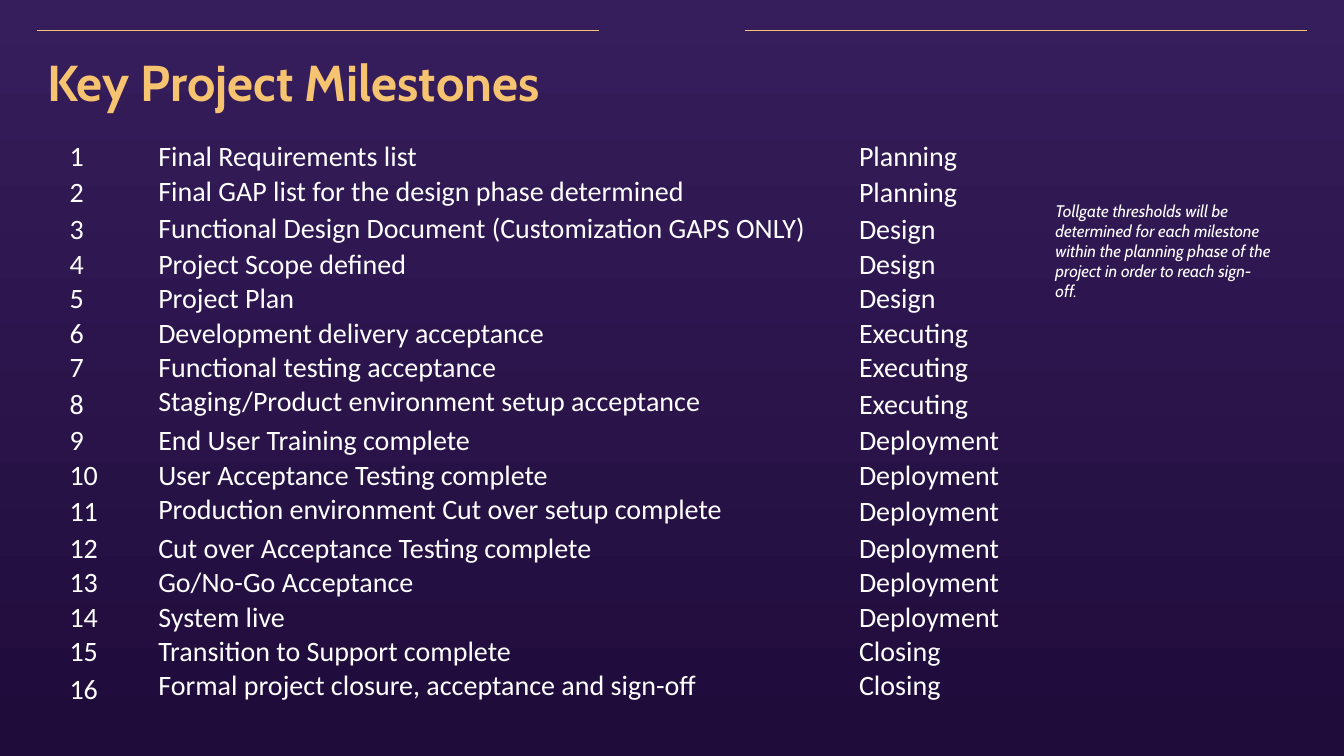
from pptx import Presentation
from pptx.dml.color import RGBColor
from pptx.enum.shapes import MSO_CONNECTOR
from pptx.enum.text import MSO_ANCHOR
from pptx.oxml.ns import qn
from pptx.util import Inches, Pt
from lxml.etree import SubElement

COLORS = {"gold": "F6C370", "text": "FFFFFF", "top": "361D5C", "bottom": "200C3B"}
NO_GRID_STYLE = "{2D5ABB26-0587-4C30-8999-92F81FD0307C}"

FORMATS = {
    "title": {"name": "Cabin", "size": Pt(36), "bold": True},
    "note": {"name": "Cabin", "size": Pt(12), "italic": True},
    "cell": {"name": "Calibri", "size": Pt(20)},
}
CELL_MARGINS = {
    "margin_left": Inches(0.01), "margin_right": Inches(0.01),
    "margin_top": 0, "margin_bottom": 0,
}

MILESTONES = [
    ("Final Requirements list", "Planning"),
    ("Final GAP list for the design phase determined", "Planning"),
    ("Functional Design Document (Customization GAPS ONLY)", "Design"),
    ("Project Scope defined", "Design"),
    ("Project Plan", "Design"),
    ("Development delivery acceptance", "Executing"),
    ("Functional testing acceptance", "Executing"),
    ("Staging/Product environment setup acceptance", "Executing"),
    ("End User Training complete", "Deployment"),
    ("User Acceptance Testing complete", "Deployment"),
    ("Production environment Cut over setup complete", "Deployment"),
    ("Cut over Acceptance Testing complete", "Deployment"),
    ("Go/No-Go Acceptance", "Deployment"),
    ("System live", "Deployment"),
    ("Transition to Support complete", "Closing"),
    ("Formal project closure, acceptance and sign-off", "Closing"),
]
COLUMN_SHARES = (0.88, 6.95, 1.86)
ROW_HEIGHT = 0.34
TALL_ROWS = {2: 0.37, 3: 0.36, 8: 0.39, 11: 0.39, 16: 0.41}
FIRST_TOP_PHASE = 12  # phases align to the top from this milestone on


def color(name):
    return RGBColor.from_string(COLORS[name])


def apply(target, values):
    for attribute, value in values.items():
        setattr(target, attribute, value)


def write(paragraph, text, style, color_name):
    run = paragraph.add_run()
    run.text = text
    apply(run.font, FORMATS[style])
    run.font.color.rgb = color(color_name)


def paint_background(slide):
    fill = slide.background.fill
    fill.gradient()
    fill.gradient_angle = 270
    for stop, name, position in zip(fill.gradient_stops, ("top", "bottom"), (0, 0.98)):
        stop.color.rgb = color(name)
        stop.position = position


def add_header_rules(slide, left, top, width, length):
    for start in (left, left + width - length):
        rule = slide.shapes.add_connector(
            MSO_CONNECTOR.STRAIGHT, Inches(start), Inches(top),
            Inches(start + length), Inches(top))
        rule.line.color.rgb = color("gold")
        rule.line.width = Pt(0.5)
        SubElement(rule._element.spPr, qn("a:effectLst"))


def add_text(slide, box, text, style, color_name, anchor, spacing=1.0):
    frame = slide.shapes.add_textbox(*map(Inches, box)).text_frame
    apply(frame, {"word_wrap": True, "vertical_anchor": anchor})
    paragraph = frame.paragraphs[0]
    paragraph.line_spacing = spacing
    write(paragraph, text, style, color_name)


def add_milestones(slide, left, top, width):
    heights = [TALL_ROWS.get(n, ROW_HEIGHT) for n in range(1, len(MILESTONES) + 1)]
    holder = slide.shapes.add_table(
        len(MILESTONES), len(COLUMN_SHARES),
        Inches(left), Inches(top), Inches(width), Inches(sum(heights)))
    schedule = holder.table
    apply(schedule, {"first_row": False, "horz_banding": False})
    for style_id in holder._element.iter(qn("a:tableStyleId")):
        style_id.text = NO_GRID_STYLE

    for column, share in zip(schedule.columns, COLUMN_SHARES):
        column.width = Inches(width * share / sum(COLUMN_SHARES))
    for row, height in zip(schedule.rows, heights):
        row.height = Inches(height)

    # Number, milestone and phase in each row
    for number, (milestone, phase) in enumerate(MILESTONES, 1):
        phase_anchor = MSO_ANCHOR.MIDDLE if number < FIRST_TOP_PHASE else MSO_ANCHOR.TOP
        anchors = (MSO_ANCHOR.MIDDLE, MSO_ANCHOR.TOP, phase_anchor)
        for index, text in enumerate((str(number), milestone, phase)):
            cell = schedule.cell(number - 1, index)
            apply(cell, CELL_MARGINS)
            cell.vertical_anchor = anchors[index]
            cell.fill.background()
            write(cell.text_frame.paragraphs[0], text, "cell", "text")


def main():
    deck = Presentation()
    apply(deck, {"slide_width": Inches(13.33), "slide_height": Inches(7.5)})
    slide = deck.slides.add_slide(deck.slide_layouts[6])
    paint_background(slide)

    # Header
    add_header_rules(slide, 0.37, 0.3, 12.59, 5.57)
    add_text(slide, (0.37, 0.53, 12.59, 0.64), "Key Project Milestones",
             "title", "gold", MSO_ANCHOR.MIDDLE, 0.9)

    # Side note and schedule
    add_text(slide, (10.37, 1.94, 2.35, 1.31),
             "Tollgate thresholds will be determined for each milestone within the "
             "planning phase of the project in order to reach sign-off.",
             "note", "text", MSO_ANCHOR.TOP)
    add_milestones(slide, 0.68, 1.39, 9.69)
    deck.save("out.pptx")


if __name__ == "__main__":
    main()
